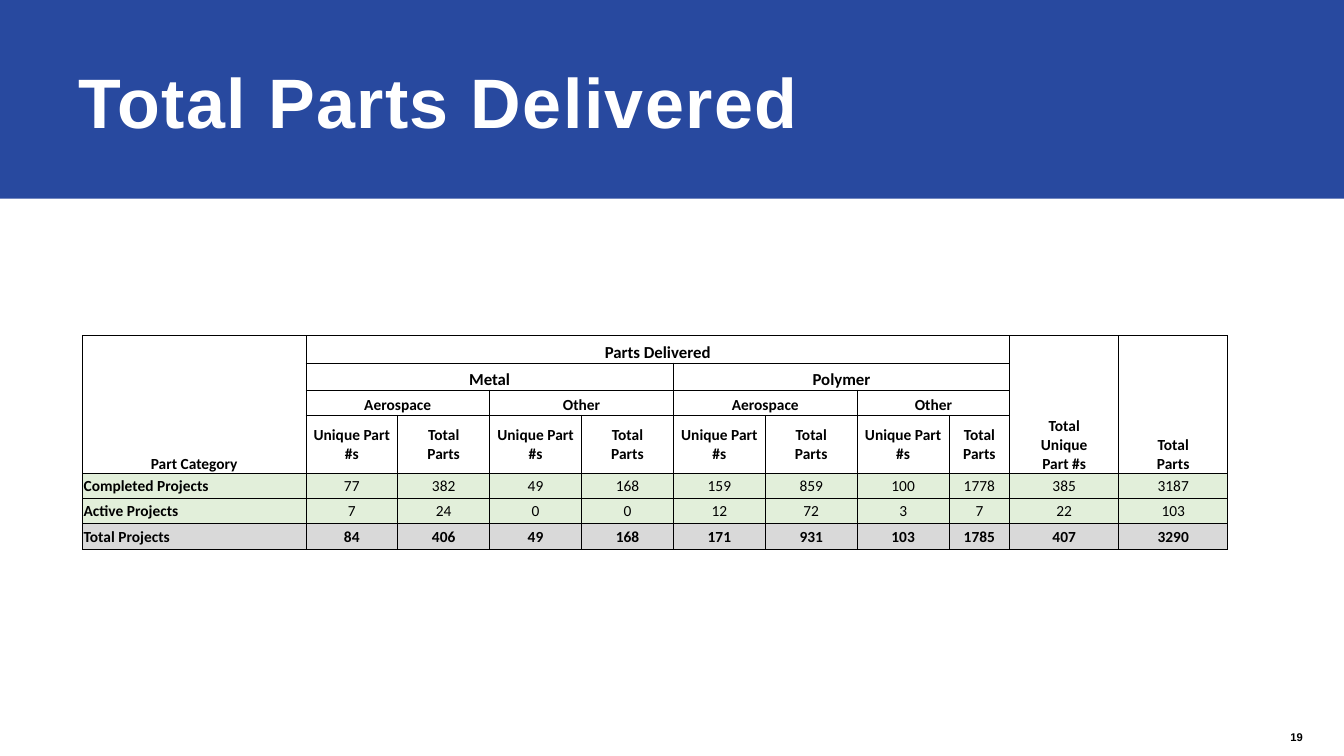
from copy import deepcopy

from lxml import etree
from pptx import Presentation
from pptx.dml.color import RGBColor
from pptx.enum.shapes import MSO_SHAPE
from pptx.enum.text import MSO_ANCHOR, MSO_AUTO_SIZE, PP_ALIGN
from pptx.oxml.ns import qn
from pptx.util import Inches, Pt

RECTANGLE = MSO_SHAPE.RECTANGLE
LEFT, CENTER, RIGHT = PP_ALIGN.LEFT, PP_ALIGN.CENTER, PP_ALIGN.RIGHT
MIDDLE, BOTTOM = MSO_ANCHOR.MIDDLE, MSO_ANCHOR.BOTTOM
NO_AUTOFIT = MSO_AUTO_SIZE.NONE

WIDTH, HEIGHT = Inches(13.33), Inches(7.5)
BLUE, GREEN, GRAY, BLACK, WHITE = "28499F", "E2EFDA", "D9D9D9", "000000", "FFFFFF"

COLUMN_WEIGHTS = [2.21] + [0.91] * 7 + [0.6] + [1.08] * 2
ROW_WEIGHTS = [0.27, 0.27, 0.25, 0.5, 0.25, 0.25, 0.26]
HEADER_ROWS = 4
HEADERS = [
    (0, 0, 4, 1, "Part Category", 11),
    (0, 1, 1, 8, "Parts Delivered", 12),
    (0, 9, 4, 1, "Total\nUnique\nPart #s", 11),
    (0, 10, 4, 1, "Total\nParts", 11),
    (1, 1, 1, 4, "Metal", 12),
    (1, 5, 1, 4, "Polymer", 12),
]
for first in range(1, 9, 4):
    HEADERS.append((2, first, 1, 2, "Aerospace", 11))
    HEADERS.append((2, first + 2, 1, 2, "Other", 11))
for first in range(1, 9, 2):
    HEADERS.append((3, first, 1, 1, "Unique Part #s", 11))
    HEADERS.append((3, first + 1, 1, 1, "Total\nParts", 11))
PROJECTS = [
    ("Completed Projects", [77, 382, 49, 168, 159, 859, 100, 1778, 385, 3187], GREEN, False),
    ("Active Projects", [7, 24, 0, 0, 12, 72, 3, 7, 22, 103], GREEN, False),
    ("Total Projects", [84, 406, 49, 168, 171, 931, 103, 1785, 407, 3290], GRAY, True),
]


def color(value):
    return RGBColor.from_string(value)


def percent_box(left, top, width, height):
    return (int(WIDTH * left / 100), int(HEIGHT * top / 100),
            int(WIDTH * width / 100), int(HEIGHT * height / 100))


def place(shape, box):
    shape.left, shape.top, shape.width, shape.height = box


def write(frame, text, size=11, font="Calibri", ink=BLACK, bold=True,
          align=CENTER, line_spacing=None, tracking=None):
    para = frame.paragraphs[0]
    para.text = text
    para.alignment = align
    para.space_before = Pt(0)
    if line_spacing:
        para.line_spacing = line_spacing
    for span in para.runs:
        span.font.size = Pt(size)
        span.font.name = font
        span.font.bold = bold
        span.font.color.rgb = color(ink)
        if tracking:
            span.font._element.set("spc", str(tracking * 100))
    for line_break in para._p.findall(qn("a:br")):
        line_break.append(deepcopy(para.runs[0].font._element))


def add_border(cell, side, points):
    line = etree.SubElement(cell._tc.get_or_add_tcPr(), qn(f"a:ln{side}"), w=str(Pt(points)))
    fill = etree.SubElement(line, qn("a:solidFill"))
    etree.SubElement(fill, qn("a:srgbClr"), val=BLACK)


def format_cell(cell, row, column):
    cell.margin_left = cell.margin_right = cell.margin_top = Inches(0.01)
    cell.margin_bottom = 0
    cell.vertical_anchor = MIDDLE
    outer_edges = {
        "L": column == 0,
        "R": column == len(COLUMN_WEIGHTS) - 1,
        "T": row == 0,
        "B": row == len(ROW_WEIGHTS) - 1,
    }
    for side, outer in outer_edges.items():
        add_border(cell, side, 1 if outer else 0.5)
    if row < HEADER_ROWS:
        cell.fill.background()
    else:
        cell.fill.solid()
        cell.fill.fore_color.rgb = color(PROJECTS[row - HEADER_ROWS][2])


def add_title_band(page, band_box, title_box):
    title = page.shapes.title
    place(title, title_box)
    frame = title.text_frame
    frame.word_wrap = True
    frame.auto_size = NO_AUTOFIT
    frame.vertical_anchor = MIDDLE
    write(frame, "Total Parts Delivered", size=50, font="Arial", ink=WHITE,
          align=LEFT, line_spacing=0.9, tracking=1)
    band = page.shapes.add_shape(RECTANGLE, *band_box)
    band.shadow.inherit = False
    band.fill.solid()
    band.fill.fore_color.rgb = color(BLUE)
    band.line.fill.background()
    title._element.addprevious(band._element)


def add_parts_table(page, box):
    left, top, width, height = box
    table = page.shapes.add_table(len(ROW_WEIGHTS), len(COLUMN_WEIGHTS), *box).table
    table.first_row = table.horz_banding = False
    for column, weight in zip(table.columns, COLUMN_WEIGHTS):
        column.width = int(width * weight / sum(COLUMN_WEIGHTS))
    for row, weight in zip(table.rows, ROW_WEIGHTS):
        row.height = int(height * weight / sum(ROW_WEIGHTS))
    for row in range(len(ROW_WEIGHTS)):
        for column in range(len(COLUMN_WEIGHTS)):
            format_cell(table.cell(row, column), row, column)
    for row, column, height_span, width_span, text, size in HEADERS:
        cell = table.cell(row, column)
        if height_span * width_span > 1:
            cell.merge(table.cell(row + height_span - 1, column + width_span - 1))
            cell.vertical_anchor = BOTTOM
        write(cell.text_frame, text, size=size)
    for row, (name, values, shade, bold) in enumerate(PROJECTS, HEADER_ROWS):
        write(table.cell(row, 0).text_frame, name, align=LEFT)
        for column, value in enumerate(values, 1):
            write(table.cell(row, column).text_frame, str(value), bold=bold)


def add_page_number(page, box):
    frame = page.shapes.add_textbox(*box).text_frame
    frame.word_wrap = True
    frame.vertical_anchor = MIDDLE
    frame.margin_left = frame.margin_right = Inches(0.1)
    frame.margin_top = frame.margin_bottom = Inches(0.1)
    write(frame, "19", size=8, font="Arial", align=RIGHT)


def main():
    deck = Presentation()
    deck.slide_width, deck.slide_height = WIDTH, HEIGHT
    page = deck.slides.add_slide(deck.slide_layouts.get_by_name("Title Only"))
    add_title_band(page, percent_box(0, 0, 100, 26.27), percent_box(5.1, 7.87, 89.5, 12.13))
    add_parts_table(page, percent_box(6.15, 44.4, 85.22, 27.33))
    add_page_number(page, percent_box(65.72, 95.07, 31.96, 4.93))
    deck.save("out.pptx")


if __name__ == "__main__":
    main()
